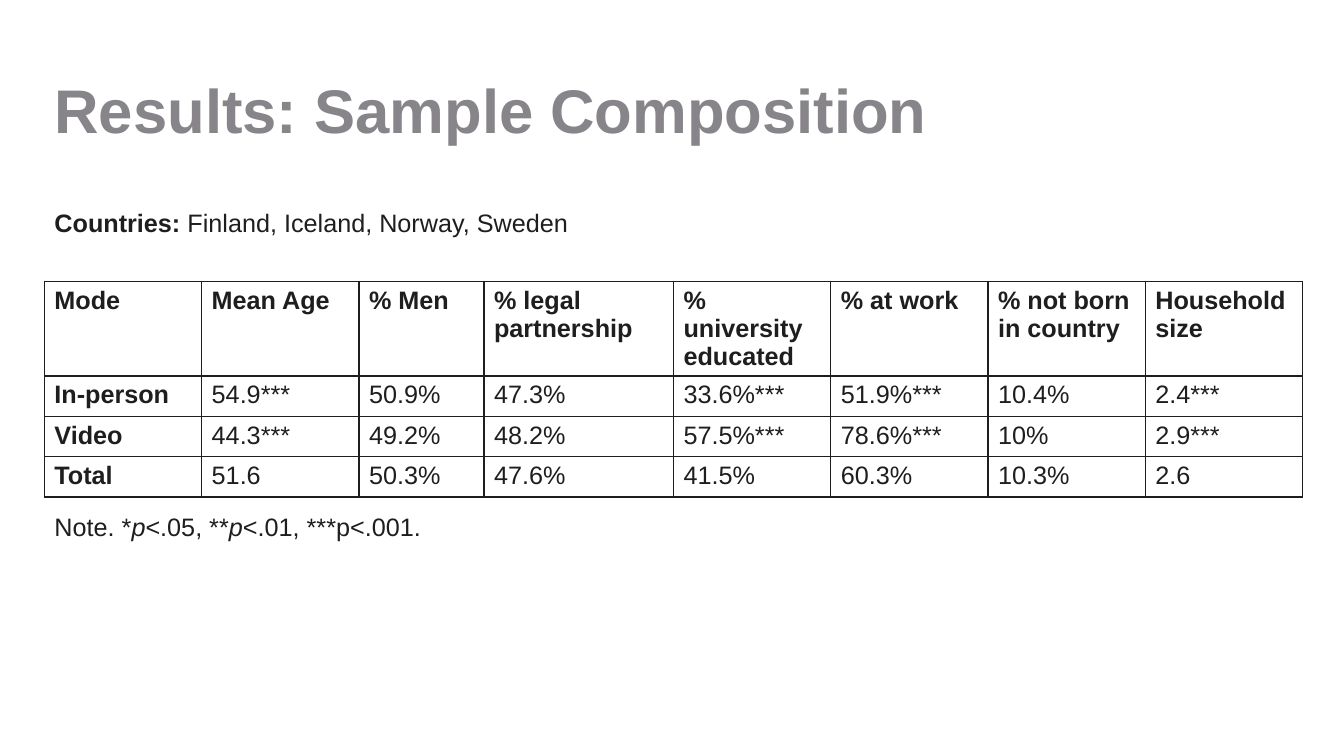
from lxml.etree import SubElement
from pptx import Presentation
from pptx.dml.color import RGBColor
from pptx.enum.text import MSO_ANCHOR, MSO_AUTO_SIZE, PP_ALIGN
from pptx.oxml.ns import qn
from pptx.util import Inches, Pt

HUES = {"title": "878589", "ink": "1E1E1E"}
LEFT = 0.44
WIDTHS = [1.56, 1.56, 1.24, 1.88] + [1.56] * 4
HEIGHTS = [0.94] + [0.4] * 3
ROWS = [
    ["Mode", "Mean Age", "% Men", "% legal partnership", "% university educated",
     "% at work", "% not born in country", "Household size"],
    ["In-person", "54.9***", "50.9%", "47.3%", "33.6%***", "51.9%***", "10.4%", "2.4***"],
    ["Video", "44.3***", "49.2%", "48.2%", "57.5%***", "78.6%***", "10%", "2.9***"],
    ["Total", "51.6", "50.3%", "47.6%", "41.5%", "60.3%", "10.3%", "2.6"],
]
LINES = [
    [("Countries: ", "b"), ("Finland, Iceland, Norway, Sweden", "")],
    [("Note. *", ""), ("p", "i"), ("<.05, **", ""), ("p", "i"), ("<.01, ***p<.001.", "")],
]


class Deck:
    """Holds the style and the current slide."""

    def __init__(self):
        self.show = Presentation()
        self.show.slide_width = Inches(13.33)
        self.show.slide_height = Inches(7.5)
        self.slide = self.show.slides.add_slide(self.show.slide_layouts[1])

    def style(self, font, size=18, hue="ink", bold=False, slant=False):
        font.name, font.size = "Arial", Pt(size)
        font.bold, font.italic = bold, slant
        font.color.rgb = RGBColor.from_string(HUES[hue])

    def place(self, shape, top, width, height, anchor):
        shape.left, shape.top = Inches(LEFT), Inches(top)
        shape.width, shape.height = Inches(width), Inches(height)
        frame = shape.text_frame
        frame.word_wrap, frame.auto_size = True, MSO_AUTO_SIZE.NONE
        frame.vertical_anchor = anchor
        return frame

    def title(self, text):
        frame = self.place(self.slide.shapes.title, 0.4, 12.45, 1.45, MSO_ANCHOR.MIDDLE)
        frame.text = text
        para = frame.paragraphs[0]
        para.alignment, para.line_spacing = PP_ALIGN.LEFT, 0.9
        self.style(para.runs[0].font, 44, "title", True)

    def body(self, lines, gap):
        frame = self.place(self.slide.placeholders[1], 2.01, 12.66, 4.34, MSO_ANCHOR.TOP)
        for row, parts in enumerate(lines):
            para = frame.add_paragraph() if row else frame.paragraphs[0]
            para.space_before = Pt(gap if row else 0)
            props = para._p.get_or_add_pPr()
            props.set("marL", "0")
            props.set("indent", "0")
            SubElement(props, qn("a:buNone"))
            for text, mark in parts:
                run = para.add_run()
                run.text = text
                self.style(run.font, bold=mark == "b", slant=mark == "i")

    def border(self, cell):
        props = cell._tc.get_or_add_tcPr()
        for at, side in enumerate(("lnL", "lnR", "lnT", "lnB")):
            line = SubElement(props, qn("a:" + side), w=str(Pt(1)))
            fill = SubElement(line, qn("a:solidFill"))
            SubElement(fill, qn("a:srgbClr"), val=HUES["ink"])
            props.insert(at, line)

    def table(self, rows):
        frame = self.slide.shapes.add_table(
            len(rows), len(WIDTHS), Inches(LEFT), Inches(2.79),
            Inches(sum(WIDTHS)), Inches(sum(HEIGHTS)))
        grid = frame.table
        grid.first_row = grid.horz_banding = False
        for col, width in zip(grid.columns, WIDTHS):
            col.width = Inches(width)
        for row, (texts, height) in enumerate(zip(rows, HEIGHTS)):
            grid.rows[row].height = Inches(height)
            for col, text in enumerate(texts):
                cell = grid.cell(row, col)
                cell.text = text
                cell.fill.background()
                self.border(cell)
                font = cell.text_frame.paragraphs[0].runs[0].font
                self.style(font, bold=row == 0 or col == 0)


def main():
    deck = Deck()
    deck.title("Results: Sample Composition")
    deck.table(ROWS)
    deck.body(LINES, 195)
    deck.show.save("out.pptx")


if __name__ == "__main__":
    main()
